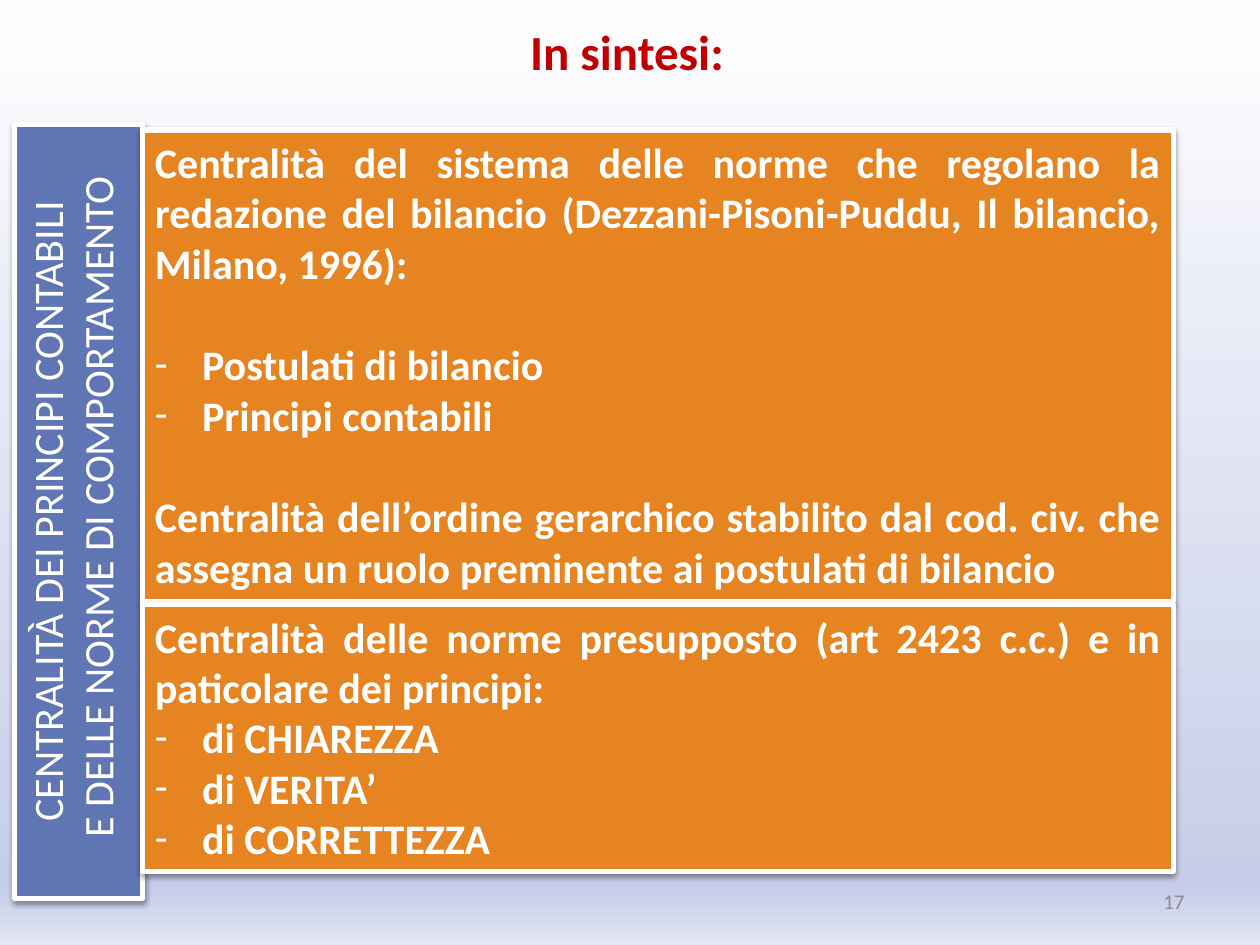
from copy import deepcopy

from lxml.etree import SubElement
from pptx import Presentation
from pptx.dml.color import RGBColor
from pptx.enum.shapes import MSO_SHAPE
from pptx.enum.text import MSO_ANCHOR, MSO_AUTO_SIZE, PP_ALIGN
from pptx.oxml.ns import qn
from pptx.util import Cm, Pt

WHITE = RGBColor(0xFF, 0xFF, 0xFF)
RED = RGBColor(0xC0, 0x00, 0x00)
BLUE = RGBColor(0x60, 0x76, 0xB4)
ORANGE = RGBColor(0xE6, 0x84, 0x22)
GREY = RGBColor(0x8C, 0x8C, 0x8C)
SKY = [
    (0.01, RGBColor(0xFE, 0xFE, 0xFF)),
    (0.94, RGBColor(0xC6, 0xCD, 0xE8)),
    (1, RGBColor(0xE3, 0xE6, 0xF3)),
]
FONT = "Calibri"
INDENT = Cm(0.95)
BLANK_LINE = Pt(29.3)

BANNER = ["CENTRALITÀ DEI PRINCIPI CONTABILI", " E DELLE NORME DI COMPORTAMENTO"]
# Each entry: text, is a list item, follows a gap
RULES = [
    ("Centralità del sistema delle norme che regolano la redazione del bilancio "
     "(Dezzani-Pisoni-Puddu, Il bilancio, Milano, 1996):", False, False),
    ("Postulati di bilancio", True, True),
    ("Principi contabili", True, False),
    ("Centralità dell’ordine gerarchico stabilito dal cod. civ. che assegna "
     "un ruolo preminente ai postulati di bilancio", False, True),
]
PRINCIPLES = [
    ("Centralità delle norme presupposto (art 2423 c.c.) e in paticolare "
     "dei principi:", False, False),
    ("di CHIAREZZA", True, False),
    ("di VERITA’", True, False),
    ("di CORRETTEZZA", True, False),
]


def paint_background(slide):
    """Fill the slide with a vertical three-stop gradient."""
    fill = slide.background.fill
    fill.gradient()
    fill.gradient_angle = 270
    stop_list = slide.element.xpath(".//p:bg//a:gsLst")[0]
    stop_list.append(deepcopy(stop_list[-1]))
    for stop, (position, color) in zip(fill.gradient_stops, SKY):
        stop.position = position
        stop.color.rgb = color


def place(shape, left, top, width, height):
    """Move and size a shape, in centimetres."""
    shape.left, shape.top = Cm(left), Cm(top)
    shape.width, shape.height = Cm(width), Cm(height)


def style_panel(panel, color):
    """Give a panel its fill, white border, soft shadow and text settings."""
    panel.fill.solid()
    panel.fill.fore_color.rgb = color
    panel.line.color.rgb = WHITE
    panel.line.width = Pt(3)
    panel.shadow.inherit = False
    effects = panel.element.spPr.find(qn("a:effectLst"))
    shadow = SubElement(effects, qn("a:outerShdw"), blurRad="40000",
                        dist="20000", dir="5400000", rotWithShape="0")
    shade = SubElement(shadow, qn("a:srgbClr"), val="000000")
    SubElement(shade, qn("a:alpha"), val="38000")
    frame = panel.text_frame
    frame.word_wrap = True
    frame.auto_size = MSO_AUTO_SIZE.NONE
    frame.vertical_anchor = MSO_ANCHOR.TOP


def set_font(paragraph, size, color, bold=False):
    """Set the font of a whole paragraph."""
    font = paragraph.font
    font.name, font.size, font.bold = FONT, Pt(size), bold
    font.color.rgb = color


def add_paragraphs(frame, count):
    """Return the frame's first paragraph followed by new ones, count in all."""
    return [frame.paragraphs[0]] + [frame.add_paragraph() for _ in range(count - 1)]


def write_title(title):
    """Write the heading in the title placeholder."""
    place(title, 0.64, 0.3, 24, 1.45)
    title.text_frame.text = "In sintesi:"
    heading = title.text_frame.paragraphs[0]
    heading.alignment = PP_ALIGN.CENTER
    set_font(heading, 28, RED, bold=True)


def add_banner(slide):
    """Add the blue banner whose text reads upwards."""
    banner = slide.shapes.add_shape(
        MSO_SHAPE.RECTANGLE, Cm(0.3), Cm(2.51), Cm(2.57), Cm(15.6))
    style_panel(banner, BLUE)
    banner.element.xpath(".//a:bodyPr")[0].set("vert", "vert270")
    for paragraph, line in zip(add_paragraphs(banner.text_frame, len(BANNER)), BANNER):
        paragraph.text = line
        paragraph.alignment = PP_ALIGN.CENTER
        set_font(paragraph, 24, WHITE)


def write_panel(panel, top, height, entries):
    """Turn a body placeholder into an orange panel of text and dashed items."""
    place(panel, 2.87, top, 20.78, height)
    style_panel(panel, ORANGE)
    paragraphs = add_paragraphs(panel.text_frame, len(entries))
    for paragraph, (text, is_item, after_gap) in zip(paragraphs, entries):
        paragraph.text = text
        paragraph.alignment = PP_ALIGN.JUSTIFY
        paragraph.space_before = BLANK_LINE if after_gap else Pt(0)
        properties = paragraph._p.get_or_add_pPr()
        properties.set("marL", str(INDENT if is_item else 0))
        properties.set("indent", str(-INDENT if is_item else 0))
        if is_item:
            SubElement(properties, qn("a:buFont"), typeface=FONT)
            SubElement(properties, qn("a:buChar"), char="-")
        else:
            SubElement(properties, qn("a:buNone"))
        set_font(paragraph, 24, WHITE, bold=True)


def add_page_number(slide):
    """Add the page number at the lower right."""
    box = slide.shapes.add_textbox(Cm(18.21), Cm(17.65), Cm(5.92), Cm(1.02))
    box.text_frame.word_wrap = True
    box.text_frame.vertical_anchor = MSO_ANCHOR.MIDDLE
    number = box.text_frame.paragraphs[0]
    number.text = "17"
    number.alignment = PP_ALIGN.RIGHT
    set_font(number, 12, GREY)


def main():
    """Build the slide and save it."""
    presentation = Presentation()
    presentation.slide_width, presentation.slide_height = Cm(25.4), Cm(19.05)
    slide = presentation.slides.add_slide(presentation.slide_layouts[3])
    title, rules, principles = slide.placeholders
    paint_background(slide)
    write_title(title)
    add_banner(slide)
    write_panel(rules, 2.62, 9.5, RULES)
    write_panel(principles, 12.19, 5.38, PRINCIPLES)
    for panel in (rules, principles):
        slide.shapes.element.append(panel.element)
    add_page_number(slide)
    presentation.save("out.pptx")


if __name__ == "__main__":
    main()
